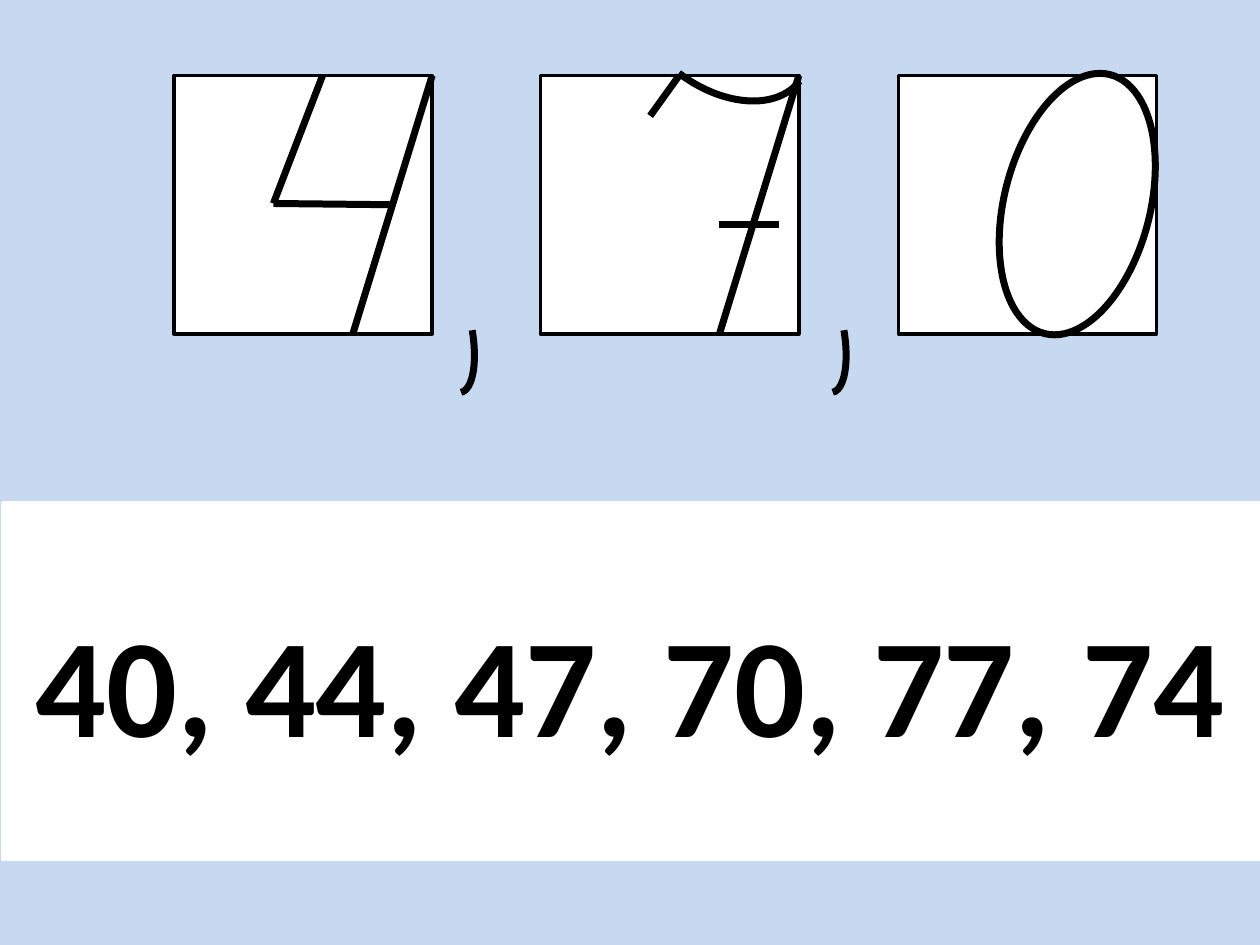
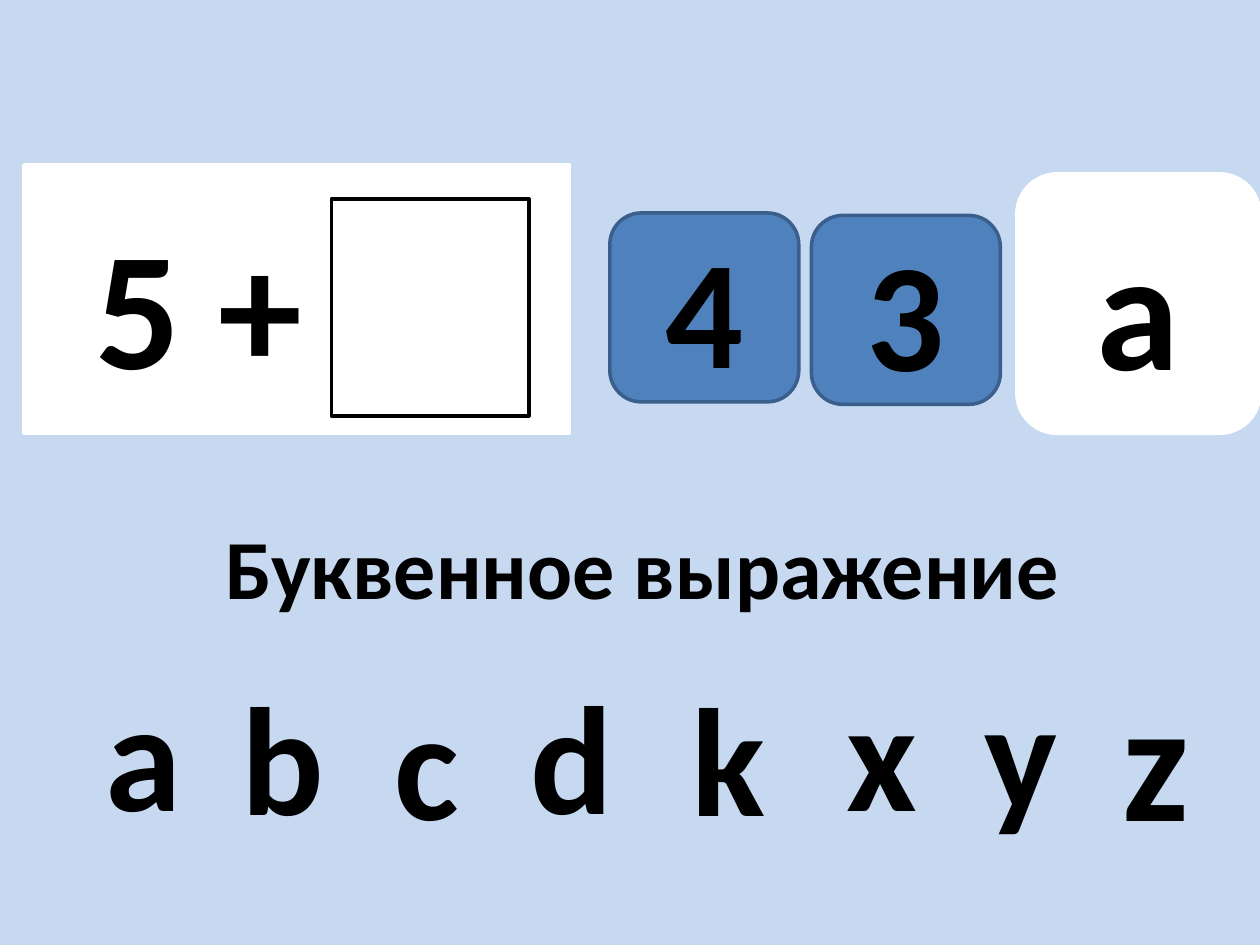
import pptx
import pptx.dml.color
import pptx.enum.shapes
import pptx.enum.text
import pptx.oxml.ns
import pptx.util
from dataclasses import dataclass
from lxml import etree

Preset = pptx.enum.shapes.MSO_SHAPE
Align = pptx.enum.text.PP_ALIGN
qn = pptx.oxml.ns.qn


@dataclass(frozen=True)
class Theme:
    font: str = "Calibri"
    sky: str = "C6D9F1"
    paper: str = "FFFFFF"
    ink: str = "000000"
    tile: str = "4F81BD"
    tile_edge: str = "3A5F8C"
    edge: float = 2
    pen: float = 4
    heading: int = 48
    numbers: int = 80
    letter: int = 88
    large: int = 96


def rgb(value):
    return pptx.dml.color.RGBColor.from_string(value)


class Board:
    """Draws on a grid of 100 columns by 75 rows."""
    columns, rows = 100, 75

    def __init__(self, deck, theme):
        self.deck, self.theme = deck, theme
        self.page = self.canvas = None

    def new_page(self):
        self.page = self.deck.slides.add_slide(self.deck.slide_layouts[6])
        self.page.background.fill.solid()
        self.page.background.fill.fore_color.rgb = rgb(self.theme.sky)
        self.canvas = self.page.shapes

    def start_group(self):
        self.canvas = self.page.shapes.add_group_shape().shapes

    def end_group(self):
        self.canvas = self.page.shapes

    def place(self, *lengths):
        """Turn alternating columns and rows into slide lengths."""
        cells = (self.deck.slide_width / self.columns,
                 self.deck.slide_height / self.rows)
        return [round(length * cells[i % 2]) for i, length in enumerate(lengths)]

    def outline(self, line, color, width):
        line.color.rgb = rgb(color)
        line.width = pptx.util.Pt(width)

    def shape(self, preset, at, fill=None, edge=None, width=None, turn=0, flip=False):
        box = self.canvas.add_shape(preset, *self.place(*at))
        box.shadow.inherit = False
        box.rotation = turn
        if fill:
            box.fill.solid()
            box.fill.fore_color.rgb = rgb(fill)
        else:
            box.fill.background()
        self.outline(box.line, edge or self.theme.ink, width or self.theme.edge)
        if flip:
            box._element.spPr.find(qn("a:xfrm")).set("flipV", "1")
        return box

    def panel(self, at, edge=None, preset=Preset.RECTANGLE):
        return self.shape(preset, at, self.theme.paper, edge)

    def arc(self, at, turn, flip=False):
        self.shape(Preset.ARC, at, width=self.theme.pen, turn=turn, flip=flip)

    def stroke(self, *ends):
        line = self.canvas.add_connector(
            pptx.enum.shapes.MSO_CONNECTOR.STRAIGHT, *self.place(*ends))
        self.outline(line.line, self.theme.ink, self.theme.pen)
        etree.SubElement(line._element.spPr, qn("a:effectLst"))

    def put_text(self, box, text, size, align=Align.CENTER):
        frame = box.text_frame
        frame.word_wrap = True
        para = frame.paragraphs[0]
        para.alignment = align
        para.font.name = self.theme.font
        para.font.size = pptx.util.Pt(size)
        para.font.bold = True
        para.font.color.rgb = rgb(self.theme.ink)
        span = para.add_run()
        span.text = text
        return span

    def label(self, at, text, size, align=Align.CENTER):
        box = self.canvas.add_textbox(*self.place(*at))
        self.put_text(box, text, size, align)
        box.text_frame.auto_size = pptx.enum.text.MSO_AUTO_SIZE.SHAPE_TO_FIT_TEXT

    def rim(self, span, color, width):
        """Give the letters of a span a thin outline."""
        line = etree.Element(qn("a:ln"), w=str(int(pptx.util.Pt(width))))
        solid = etree.SubElement(line, qn("a:solidFill"))
        etree.SubElement(solid, qn("a:srgbClr"), val=color)
        span._r.get_or_add_rPr().insert(0, line)


def digits_page(board):
    theme = board.theme
    board.new_page()

    # Writing squares
    top, side = 6, 20.5
    bottom = top + side
    four, seven, zero = 13.8, 42.9, 71.3
    for left in (four, seven, zero):
        board.panel((left, top, side, side))

    # Slanted stems shared by four and seven
    for left in (four, seven):
        board.stroke(left + side, top, left + 14.2, bottom)

    # Rest of the four
    board.stroke(25.6, top, 21.7, 16.15)
    board.stroke(21.7, 16.15, 31.1, 16.25)

    # Rest of the seven
    board.stroke(51.6, 9.2, 53.9, top)
    board.stroke(57.1, 17.8, 61.8, 17.8)
    board.arc((49.1, -3.7, 16, 10.6), 37.3, flip=True)

    # Zero
    board.shape(Preset.OVAL, (79.7, 5.6, 11.6, 21.2), theme.paper,
                width=theme.pen, turn=14.2)

    # Commas
    for left in (31.1, 60.6):
        board.arc((left, 24.8, 9.4, 3.4), 80.3)

    # Resulting numbers
    band = board.panel((0.2, 39.9, 99.8, 28.3), theme.paper)
    span = board.put_text(band, "40, 44, 47, 70, 77, 74", theme.numbers)
    board.rim(span, theme.paper, 0.75)


def letters_page(board):
    theme = board.theme
    board.new_page()

    # Sum with an empty window
    board.start_group()
    board.panel((1.9, 13.1, 43.3, 21.3), theme.paper)
    board.label((6.6, 15.5, 35.4, 17.2), "5 +", theme.large, Align.LEFT)
    board.panel((26.3, 15.8, 15.7, 17.2))
    board.end_group()

    # Cards for the window
    card = board.panel((80.7, 13.8, 19.3, 20.6), theme.paper, Preset.ROUNDED_RECTANGLE)
    board.put_text(card, "a", theme.large)
    for digit, left, top in (("3", 64.4, 17.1), ("4", 48.4, 16.9)):
        card = board.shape(Preset.ROUNDED_RECTANGLE, (left, top, 15, 15),
                           theme.tile, theme.tile_edge)
        board.put_text(card, digit, theme.letter)

    # Heading
    board.label((16.9, 40.4, 68.6, 9.1), "Буквенное выражение", theme.heading, Align.LEFT)

    # Row of letters
    letters = (("а", 5.8, 51.7), ("b", 16.9, 52), ("c", 28.3, 52.4), ("d", 39.8, 51.9),
               ("k", 52.3, 52.1), ("x", 64.4, 51.7), ("y", 75.5, 51.6))
    for letter, left, top in letters:
        board.label((left, top, 11.1, 15.8), letter, theme.letter)
    board.label((86.2, 51.4, 11.1, 17.2), "z", theme.large)


def main():
    deck = pptx.Presentation()
    deck.slide_width = pptx.util.Inches(10)
    deck.slide_height = pptx.util.Inches(7.5)
    board = Board(deck, Theme())
    digits_page(board)
    letters_page(board)
    deck.save("out.pptx")


if __name__ == "__main__":
    main()
